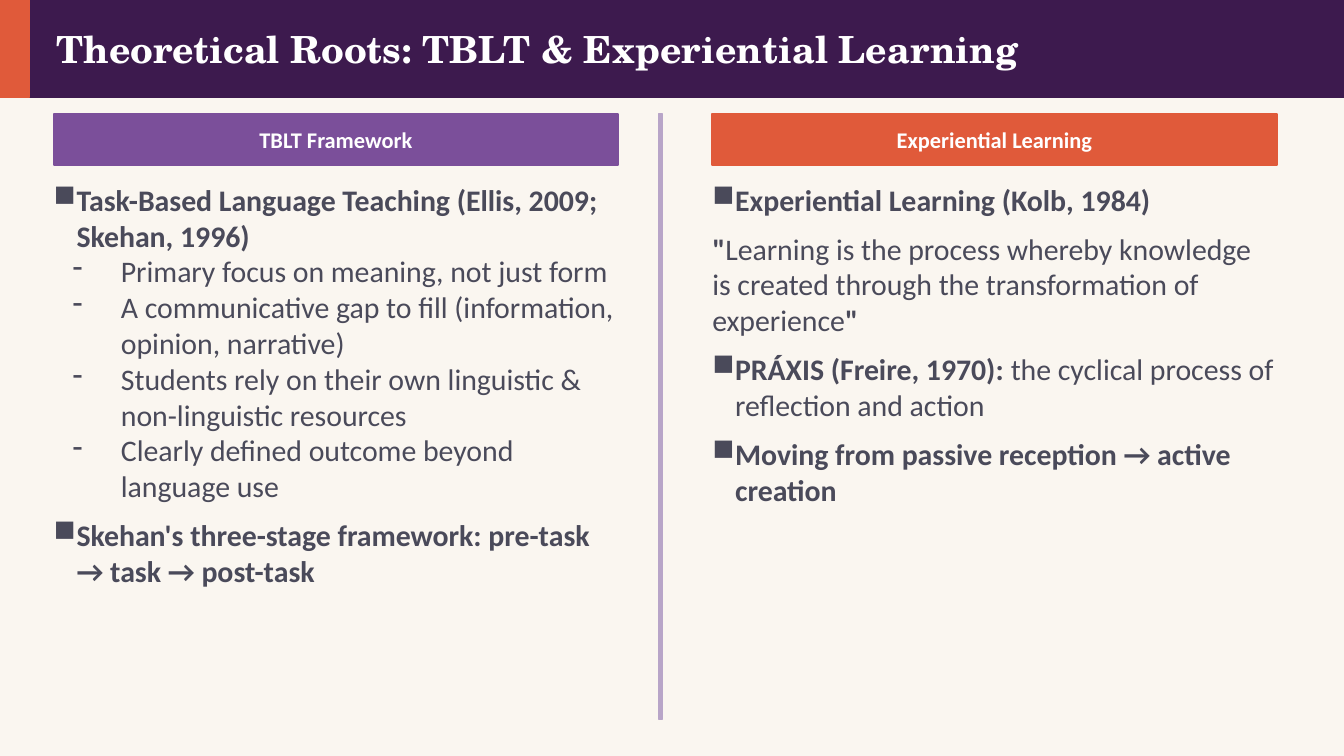
import dataclasses
import typing
import lxml.etree
import pptx
import pptx.dml.color
import pptx.enum.shapes
import pptx.enum.text
import pptx.oxml.ns
import pptx.util

PX = 4572
INK = {
    "page": "FAF6F0",
    "plum": "3D1A4E",
    "coral": "E05A3A",
    "violet": "7B4F9A",
    "lilac": "B8A5C8",
    "text": "4A4A5A",
    "white": "FFFFFF",
}
ALIGN = pptx.enum.text.PP_ALIGN
MIDDLE = pptx.enum.text.MSO_ANCHOR.MIDDLE


class Box(typing.NamedTuple):
    left: int
    top: int
    width: int
    height: int


class Mark(typing.NamedTuple):
    char: str
    margin: int
    indent: int


class Span(typing.NamedTuple):
    text: str
    bold: bool = True


@dataclasses.dataclass
class Item:
    spans: list[Span]
    mark: Mark | None = None
    gap: int = 0


@dataclasses.dataclass
class Column:
    left: int
    head: str
    ink: str
    items: list[Item]


SQUARE = Mark("■", 34, -38)
DASH = Mark("-", 100, -72)

COLUMNS = [
    Column(80, "TBLT Framework", "violet", [
        Item([Span("Task-Based Language Teaching (Ellis, 2009; Skehan, 1996)")], SQUARE),
        Item([Span("Primary focus on meaning, not just form", False)], DASH),
        Item([Span("A communicative gap to fill (information, opinion, narrative)", False)], DASH),
        Item([Span("Students rely on their own linguistic & non-linguistic resources", False)], DASH),
        Item([Span("Clearly defined outcome beyond language use", False)], DASH),
        Item([Span("Skehan's three-stage framework: pre-task → task → post-task")], SQUARE, 7),
    ]),
    Column(1060, "Experiential Learning", "coral", [
        Item([Span("Experiential Learning (Kolb, 1984)")], SQUARE),
        Item([
            Span('"'),
            Span("Learning is the process whereby knowledge is created "
                 "through the transformation of experience", False),
            Span('"'),
        ], gap=7),
        Item([
            Span("PRÁXIS (Freire, 1970): "),
            Span("the cyclical process of reflection and action", False),
        ], SQUARE, 7),
        Item([Span("Moving from passive reception → active creation")], SQUARE, 7),
    ]),
]


def color(ink: str) -> pptx.dml.color.RGBColor:
    return pptx.dml.color.RGBColor.from_string(INK[ink])


def place(box: Box) -> list[int]:
    return [side * PX for side in box]


def style(font, size: int, ink: str, bold: bool, face: str = "Calibri") -> None:
    font.size = pptx.util.Pt(size)
    font.name = face
    font.bold = bold
    font.color.rgb = color(ink)


def clear(frame) -> None:
    frame.word_wrap = True
    frame.auto_size = pptx.enum.text.MSO_AUTO_SIZE.NONE
    frame.margin_left = frame.margin_right = 0
    frame.margin_top = frame.margin_bottom = 0


def block(slide, box: Box, ink: str):
    shape = slide.shapes.add_shape(pptx.enum.shapes.MSO_SHAPE.RECTANGLE, *place(box))
    shape.shadow.inherit = False
    shape.fill.solid()
    shape.fill.fore_color.rgb = color(ink)
    shape.line.color.rgb = color(ink)
    shape.line.width = pptx.util.Pt(1)
    return shape


def label(frame, text: str, size: int, align, face: str = "Calibri") -> None:
    clear(frame)
    frame.vertical_anchor = MIDDLE
    para = frame.paragraphs[0]
    para.text = text
    para.alignment = align
    style(para.font, size, "white", True, face)


def bullet(para, mark: Mark) -> None:
    props = para._p.get_or_add_pPr()
    props.set("marL", str(mark.margin * PX))
    props.set("indent", str(mark.indent * PX))
    name = pptx.oxml.ns.qn
    tint = lxml.etree.SubElement(props, name("a:buClr"))
    lxml.etree.SubElement(tint, name("a:srgbClr"), val=INK["text"])
    lxml.etree.SubElement(props, name("a:buChar"), char=mark.char)


def fill(frame, items: list[Item]) -> None:
    clear(frame)
    for rank, item in enumerate(items):
        para = frame.add_paragraph() if rank else frame.paragraphs[0]
        if item.mark:
            bullet(para, item.mark)
        para.space_before = pptx.util.Pt(item.gap)
        for span in item.spans:
            run = para.add_run()
            run.text = span.text
            style(run.font, 16, "text", span.bold)


def column(slide, col: Column) -> None:
    head = block(slide, Box(col.left, 170, 840, 76), col.ink)
    label(head.text_frame, col.head, 12, ALIGN.CENTER)
    body = slide.shapes.add_textbox(*place(Box(col.left, 270, 840, 780)))
    fill(body.text_frame, col.items)


def main() -> None:
    deck = pptx.Presentation()
    deck.slide_width = 2000 * PX
    deck.slide_height = 1125 * PX
    slide = deck.slides.add_slide(deck.slide_layouts[5])
    slide.background.fill.solid()
    slide.background.fill.fore_color.rgb = color("page")

    block(slide, Box(0, 0, 2000, 144), "plum")
    block(slide, Box(0, 0, 44, 144), "coral")
    title = slide.shapes.title
    title.left, title.top, title.width, title.height = place(Box(84, 0, 1860, 144))
    label(title.text_frame, "Theoretical Roots: TBLT & Experiential Learning",
          20, ALIGN.LEFT, "TeX Gyre Schola")
    title.element.getparent().append(title.element)

    block(slide, Box(980, 170, 6, 900), "lilac")
    for col in COLUMNS:
        column(slide, col)
    deck.save("out.pptx")


if __name__ == "__main__":
    main()
